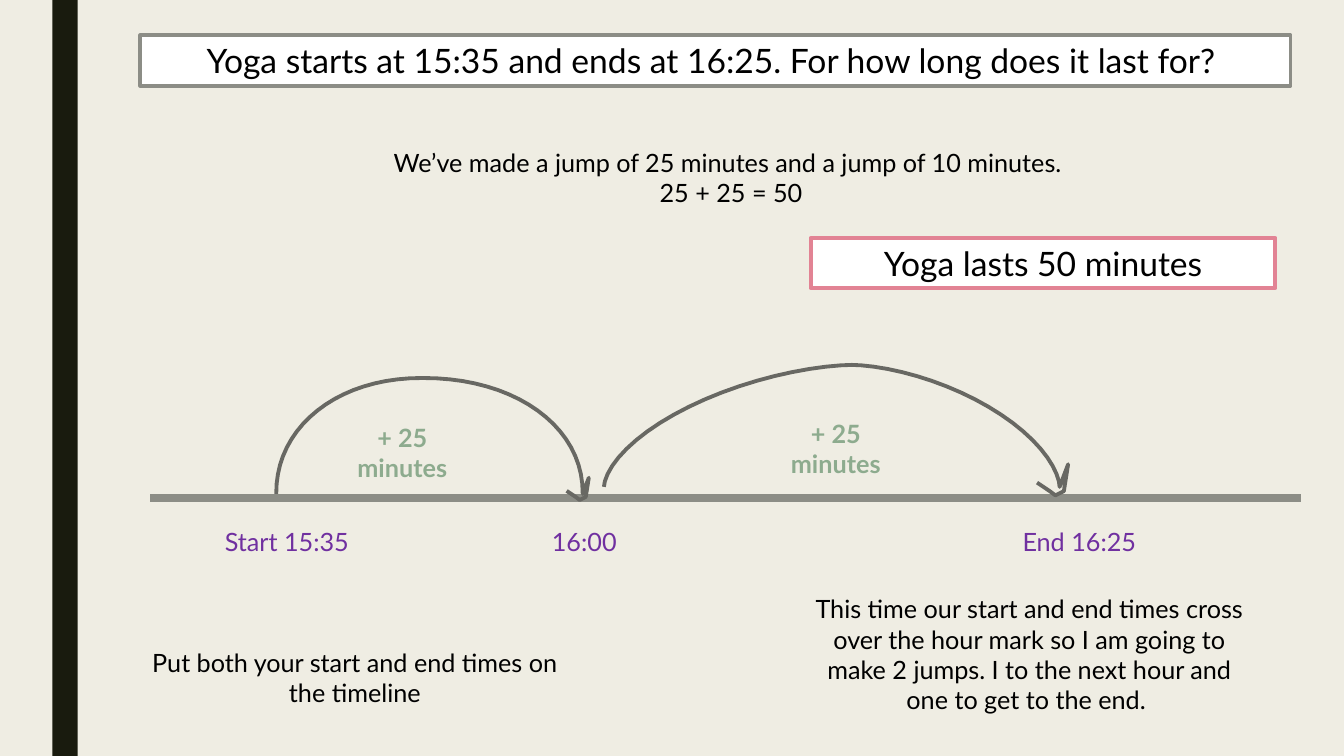
from dataclasses import dataclass
from math import copysign, cos, pi, sin
from lxml.etree import SubElement
from pptx import Presentation
from pptx.dml.color import RGBColor as RGB
from pptx.enum.shapes import MSO_CONNECTOR as Link, MSO_SHAPE as Kind
from pptx.enum.text import MSO_ANCHOR as Anchor, MSO_AUTO_SIZE as Auto, PP_ALIGN as Align
from pptx.oxml.ns import qn
from pptx.util import Inches, Pt


@dataclass(frozen=True)
class Theme:
    font: str = "Lato"
    back: str = "EFEDE3"
    band: str = "191B0E"
    white: str = "FFFFFF"
    ink: str = "000000"
    grey: str = "8C8D86"
    pink: str = "E28394"
    time: str = "7030A0"
    gain: str = "8DAB8E"
    arc: str = "686863"
    big: int = 24
    body: int = 18
    edge: float = 2.75
    axis: float = 6


theme = Theme()


def write(shape, text, size=theme.body, color=theme.ink, bold=False):
    frame = shape.text_frame
    frame.text = text
    look = {"word_wrap": True, "auto_size": Auto.NONE, "vertical_anchor": Anchor.TOP}
    for name, value in look.items():
        setattr(frame, name, value)
    for para in frame.paragraphs:
        para.alignment = Align.CENTER
        font = para.runs[0].font
        look = {"name": theme.font, "size": Pt(size), "bold": bold}
        for name, value in look.items():
            setattr(font, name, value)
        font.color.rgb = RGB.from_string(color)


def paint(shape, fill=None, line=None):
    shape.shadow.inherit = False
    if fill:
        shape.fill.solid()
        shape.fill.fore_color.rgb = RGB.from_string(fill)
    else:
        shape.fill.background()
    if line:
        shape.line.color.rgb = RGB.from_string(line)
        shape.line.width = Pt(theme.edge)
    else:
        shape.line.fill.background()


deck = Presentation()
deck.slide_width, deck.slide_height = Inches(13.33), Inches(7.5)
slide = deck.slides.add_slide(deck.slide_layouts[5])
shapes = slide.shapes
slide.background.fill.solid()
slide.background.fill.fore_color.rgb = RGB.from_string(theme.back)

# Side band
band = shapes.add_shape(Kind.RECTANGLE, Inches(0.52), 0, Inches(0.25), deck.slide_height)
paint(band, theme.band)

# Question as the title
title = shapes.title
spot = {"left": 1.39, "top": 0.35, "width": 11.41, "height": 0.5}
for name, value in spot.items():
    setattr(title, name, Inches(value))
write(title, "Yoga starts at 15:35 and ends at 16:25. For how long does it last for? ", theme.big)
paint(title, theme.white, theme.grey)

# Timeline
level = Inches(4.94)
axis = shapes.add_connector(Link.STRAIGHT, Inches(1.49), level, Inches(12.9), level)
axis.line.color.rgb = RGB.from_string(theme.grey)
axis.line.width = Pt(theme.axis)
SubElement(axis._element.spPr, qn("a:effectLst"))

# Jumps: an arch of two quarter superellipses that meet at the peak, then an
# arrowhead drawn in the same stroke. A bend of 2 is an ellipse; less is flatter.
steps = 40
hook = [(0.06, -0.16), (0.03, 0.03), (-0.03, 0.06), (-0.07, 0.03), (-0.16, -0.03)]
jumps = [
    {"left": 2.74, "peak": 4.19, "right": 5.78, "top": 3.75, "foot": 4.9, "bend": 2.1, "head": 1},
    {"left": 5.99, "peak": 8.45, "right": 10.51, "top": 3.62, "foot": 4.83, "bend": 1.65, "head": 1.4},
]
for jump in jumps:
    left, peak, right, top, foot, bend, head = jump.values()
    points = []
    for step in range(steps + 1):
        turn = pi * (1 - step / steps)
        reach = copysign(abs(cos(turn)) ** (2 / bend), cos(turn))
        rise = abs(sin(turn)) ** (2 / bend)
        side = peak - left if reach < 0 else right - peak
        points.append((peak + side * reach, foot - (foot - top) * rise))
    points += [(right + head * dx, foot + head * dy) for dx, dy in hook]
    start, *rest = [(Inches(x), Inches(y)) for x, y in points]
    pen = shapes.build_freeform(*start)
    pen.add_line_segments(rest, close=False)
    paint(pen.convert_to_shape(), line=theme.arc)

# Times in one row below the line
for left, text in [(1.93, "Start 15:35"), (4.88, "16:00"), (9.79, "End 16:25")]:
    box = shapes.add_textbox(Inches(left), Inches(5.17), Inches(1.83), Inches(0.4))
    write(box, text, color=theme.time)

# Size of each jump under its arch
for left, top in [(3.36, 4.14), (7.66, 4.1)]:
    box = shapes.add_textbox(Inches(left), Inches(top), Inches(1.26), Inches(0.71))
    write(box, "+ 25 minutes", color=theme.gain, bold=True)

# Notes
notes = [
    (1.24, 6.37, 4.56, 0.71, "Put both your start and end times on the timeline"),
    (7.93, 5.84, 4.56, 1.31, "This time our start and end times cross over the hour mark so I am "
     "going to make 2 jumps. I to the next hour and one to get to the end. "),
    (1.71, 1.41, 11.08, 0.71, "We’ve made a jump of 25 minutes and a jump of 10 minutes. \n"
     "25 + 25 = 50"),
]
for *place, text in notes:
    write(shapes.add_textbox(*map(Inches, place)), text)

# Answer
answer = shapes.add_shape(Kind.RECTANGLE, *map(Inches, (8.04, 2.36, 4.61, 0.5)))
write(answer, "Yoga lasts 50 minutes", theme.big)
paint(answer, theme.white, theme.pink)

deck.save("out.pptx")
